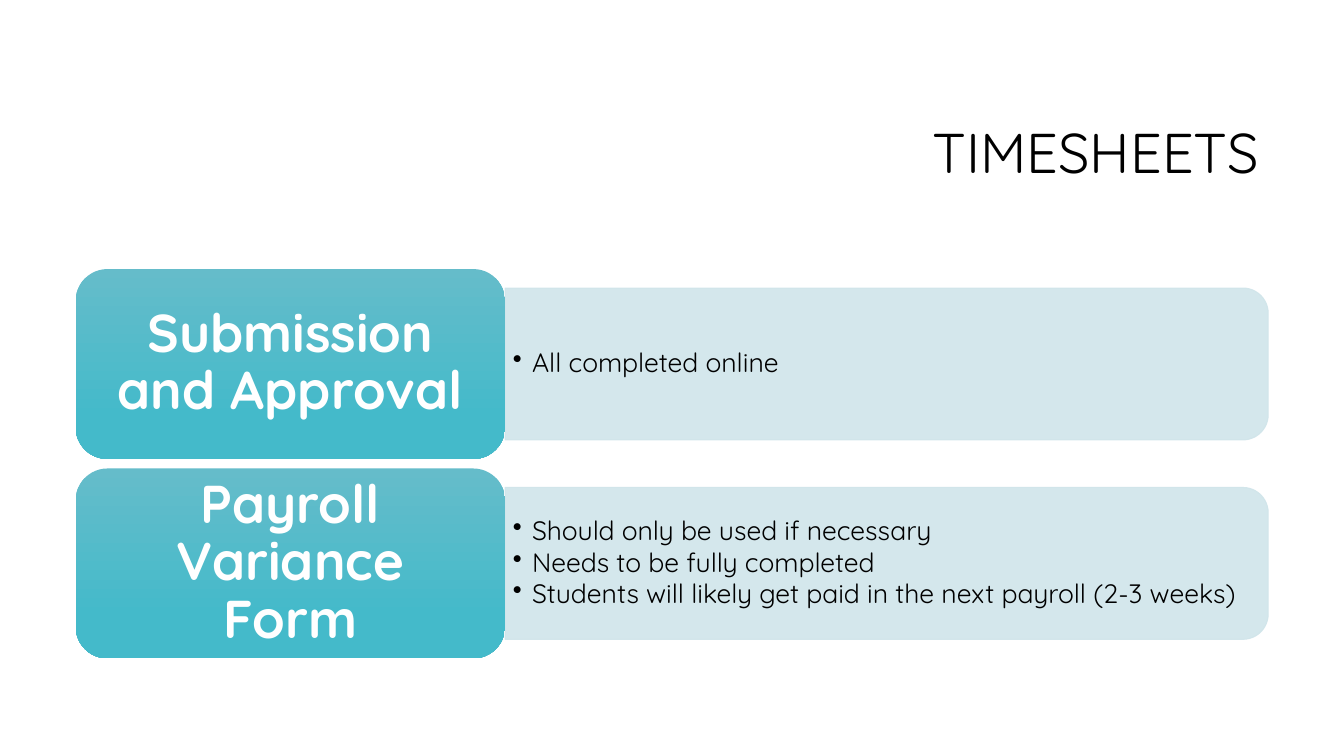
import dataclasses

import lxml.etree
import pptx
import pptx.dml.color
import pptx.enum.shapes
import pptx.enum.text
import pptx.oxml.ns
import pptx.util

Cm = pptx.util.Cm
Pt = pptx.util.Pt
RGB = pptx.dml.color.RGBColor.from_string
SHAPE = pptx.enum.shapes.MSO_SHAPE
ALIGN = pptx.enum.text.PP_ALIGN
qn = pptx.oxml.ns.qn


@dataclasses.dataclass(frozen=True)
class Theme:
    font: str = "Quicksand"
    ink: str = "000000"
    white: str = "FFFFFF"
    band: str = "D0E5EA"
    label_top: str = "65BCCA"
    label_bottom: str = "44BACA"
    title_size: int = 40
    label_size: int = 38
    bullet_size: int = 19


THEME = Theme()

ROWS = [
    ("Submission and Approval", ["All completed online"]),
    ("Payroll Variance Form", [
        "Should only be used if necessary",
        "Needs to be fully completed",
        "Students will likely get paid in the next payroll (2-3 weeks)",
    ]),
]


def write(sp, lines, size, color, align, margins, bold=False):
    """Fill a shape with vertically centred paragraphs."""
    tf = sp.text_frame
    tf.word_wrap = True
    tf.vertical_anchor = pptx.enum.text.MSO_ANCHOR.MIDDLE
    tf.margin_left = tf.margin_right = Cm(margins[0])
    tf.margin_top = tf.margin_bottom = Cm(margins[1])
    tf.text = "\n".join(lines)
    for p in tf.paragraphs:
        p.alignment = align
        p.line_spacing = 0.9
        for r in p.runs:
            r.font.name = THEME.font
            r.font.size = Pt(size)
            r.font.bold = bold
            r.font.color.rgb = RGB(color)
    return tf


def add_bullets(tf):
    for p in tf.paragraphs:
        p.space_after = Pt(2)
        pPr = p._p.get_or_add_pPr()
        pPr.set("marL", str(Cm(0.48)))
        pPr.set("indent", str(-Cm(0.48)))
        lxml.etree.SubElement(pPr, qn("a:buChar"), char="•")


def add_title(slide, text, left, top, width, height):
    sp = slide.shapes.add_textbox(Cm(left), Cm(top), Cm(width), Cm(height))
    write(sp, [text], THEME.title_size, THEME.ink, ALIGN.RIGHT, (0.25, 0.13))


def add_band(slide, bullets, left, top, width, height):
    # The shape is drawn upright, then turned so its round corners face right
    sp = slide.shapes.add_shape(
        SHAPE.ROUND_2_SAME_RECTANGLE,
        Cm(left + (width - height) / 2), Cm(top + (height - width) / 2),
        Cm(height), Cm(width))
    sp.rotation = 90
    sp.shadow.inherit = False
    sp.fill.solid()
    sp.fill.fore_color.rgb = RGB(THEME.band)
    sp.line.color.rgb = RGB(THEME.band)
    sp.line.width = Pt(0.75)
    for color in sp._element.spPr.iter(qn("a:srgbClr")):
        lxml.etree.SubElement(color, qn("a:alpha"), val="90000")

    # Level text over the turned shape
    box = slide.shapes.add_textbox(Cm(left), Cm(top), Cm(width), Cm(height))
    tf = write(box, bullets, THEME.bullet_size, THEME.ink, ALIGN.LEFT, (0.2, 0.1))
    add_bullets(tf)


def add_label(slide, text, left, top, width, height):
    sp = slide.shapes.add_shape(SHAPE.ROUNDED_RECTANGLE, Cm(left), Cm(top),
                                Cm(width), Cm(height))
    sp.shadow.inherit = False
    sp.line.fill.background()
    sp.fill.gradient()
    sp.fill.gradient_angle = 270
    stops = ((0, THEME.label_top), (0.78, THEME.label_bottom))
    for stop, (position, color) in zip(sp.fill.gradient_stops, stops):
        stop.position = position
        stop.color.rgb = RGB(color)
    write(sp, [text], THEME.label_size, THEME.white, ALIGN.CENTER,
          (0.63, 0.43), bold=True)


def add_row(slide, label, bullets, left, top, width, height):
    """A label over the left 36 % and a band, 80 % as tall, beside it."""
    label_width = width * 0.36
    add_band(slide, bullets, left + label_width, top + height * 0.1,
             width - label_width, height * 0.8)
    add_label(slide, label, left, top, label_width, height)


def add_rows(slide, rows, left, top, width, height, gap):
    row_height = (height - gap * (len(rows) - 1)) / len(rows)
    for i, (label, bullets) in enumerate(rows):
        add_row(slide, label, bullets, left, top + i * (row_height + gap),
                width, row_height)


def main():
    prs = pptx.Presentation()
    prs.slide_width, prs.slide_height = Cm(33.87), Cm(19.05)
    slide = prs.slides.add_slide(prs.slide_layouts[6])
    add_title(slide, "TIMESHEETS", 8.05, 2.13, 23.93, 3.58)
    add_rows(slide, ROWS, 1.91, 6.78, 30.05, 9.81, gap=0.24)
    prs.save("out.pptx")


if __name__ == "__main__":
    main()
